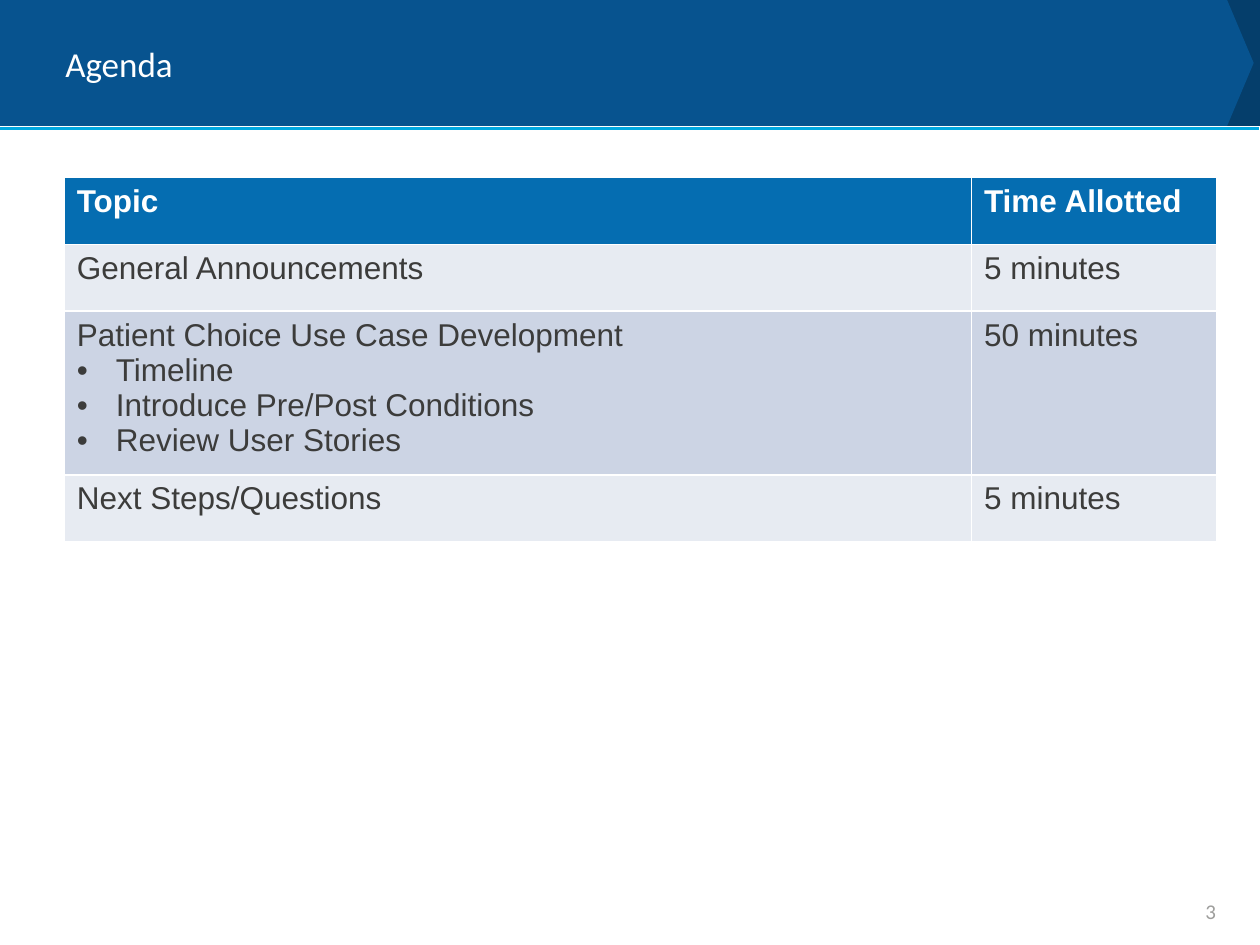
from lxml.etree import SubElement
from pptx import Presentation
from pptx.dml.color import RGBColor
from pptx.enum.shapes import MSO_CONNECTOR, MSO_SHAPE
from pptx.enum.text import MSO_ANCHOR, PP_ALIGN
from pptx.oxml.ns import qn
from pptx.util import Inches, Pt

COLORS = {
    "banner": "07538F", "banner_end": "053E6B", "rule": "00A8E1",
    "header": "056DB1", "light": "E7EBF2", "dark": "CCD4E4",
    "white": "FFFFFF", "text": "3C3C3B", "number": "9E9E9C",
}
BANNER = [  # left, width, point depth, colour
    (9.55, 0.45, 0, "banner_end"),
    (0, 9.95, 0.211, "banner"),
]
LABELS = [  # text, box, alignment, format
    ("Agenda", (0.42, 0.08, 9.17, 0.85), PP_ALIGN.LEFT,
     {"name": "Calibri", "size": Pt(20), "color": "white"}),
    ("3", (7.42, 7.11, 2.33, 0.25), PP_ALIGN.RIGHT,
     {"name": "Calibri", "size": Pt(12), "color": "number"}),
]
AGENDA = [  # topic, bulleted details, time
    ("Topic", [], "Time Allotted"),
    ("General Announcements", [], "5 minutes"),
    ("Patient Choice Use Case Development",
     ["Timeline", "Introduce Pre/Post Conditions", "Review User Stories"],
     "50 minutes"),
    ("Next Steps/Questions", [], "5 minutes"),
]
COL_WIDTHS = [7.2, 1.95]
ROW_HEIGHT, DETAILED_HEIGHT = 0.53, 1.22
HEADER_FONT = {"name": "Arial", "size": Pt(18), "bold": True, "color": "white"}
BODY_FONT = {"name": "Arial", "size": Pt(18), "bold": False, "color": "text"}


def rgb(name):
    return RGBColor.from_string(COLORS[name])


def set_font(font, fmt):
    for key, value in fmt.items():
        if key == "color":
            font.color.rgb = rgb(value)
        else:
            setattr(font, key, value)


def add_banner(s):
    for left, width, depth, color in BANNER:
        sp = s.shapes.add_shape(MSO_SHAPE.PENTAGON, Inches(left), 0,
                                Inches(width), Inches(1))
        sp.adjustments[0] = depth
        sp.shadow.inherit = False
        sp.fill.solid()
        sp.fill.fore_color.rgb = rgb(color)
        sp.line.fill.background()
    rule = s.shapes.add_connector(MSO_CONNECTOR.STRAIGHT, 0, Inches(1.02),
                                  Inches(9.99), Inches(1.02))
    rule.line.color.rgb = rgb("rule")
    rule.line.width = Pt(2.25)
    SubElement(rule._element.spPr, qn("a:effectLst"))


def add_label(s, text, box, align, fmt):
    tf = s.shapes.add_textbox(*map(Inches, box)).text_frame
    tf.word_wrap = True
    tf.vertical_anchor = MSO_ANCHOR.MIDDLE
    p = tf.paragraphs[0]
    p.alignment = align
    r = p.add_run()
    r.text = text
    set_font(r.font, fmt)


def add_bullet(p):
    pPr = p._p.get_or_add_pPr()
    pPr.set("marL", str(Inches(0.31)))
    pPr.set("indent", str(-Inches(0.31)))
    SubElement(pPr, qn("a:buFont"), typeface="Arial")
    SubElement(pPr, qn("a:buChar"), char="•")


def style_cell(cell, color):
    """Give the cell white borders, then its fill."""
    tcPr = cell._tc.get_or_add_tcPr()
    for side in ("lnL", "lnR", "lnT", "lnB"):
        ln = SubElement(tcPr, qn(f"a:{side}"), w=str(Pt(1)))
        fill = SubElement(ln, qn("a:solidFill"))
        SubElement(fill, qn("a:srgbClr"), val=COLORS["white"])
    cell.fill.solid()
    cell.fill.fore_color.rgb = rgb(color)


def fill_cell(cell, text, details, fmt):
    tf = cell.text_frame
    for i, line in enumerate([text, *details]):
        p = tf.add_paragraph() if i else tf.paragraphs[0]
        if i:
            add_bullet(p)
        r = p.add_run()
        r.text = line
        set_font(r.font, fmt)


def add_agenda(s):
    heights = [DETAILED_HEIGHT if details else ROW_HEIGHT
               for _, details, _ in AGENDA]
    table = s.shapes.add_table(
        len(AGENDA), len(COL_WIDTHS), Inches(0.51), Inches(1.41),
        Inches(sum(COL_WIDTHS)), Inches(sum(heights))).table
    for col, width in zip(table.columns, COL_WIDTHS):
        col.width = Inches(width)
    for i, (topic, details, time) in enumerate(AGENDA):
        table.rows[i].height = Inches(heights[i])
        color = "header" if i == 0 else ("dark", "light")[i % 2]
        fmt = BODY_FONT if i else HEADER_FONT
        for j, (text, extra) in enumerate([(topic, details), (time, [])]):
            cell = table.cell(i, j)
            style_cell(cell, color)
            fill_cell(cell, text, extra, fmt)


def main():
    prs = Presentation()
    prs.slide_width, prs.slide_height = Inches(10), Inches(7.5)
    s = prs.slides.add_slide(prs.slide_layouts[6])
    add_banner(s)
    for label in LABELS:
        add_label(s, *label)
    add_agenda(s)
    prs.save("out.pptx")


if __name__ == "__main__":
    main()
